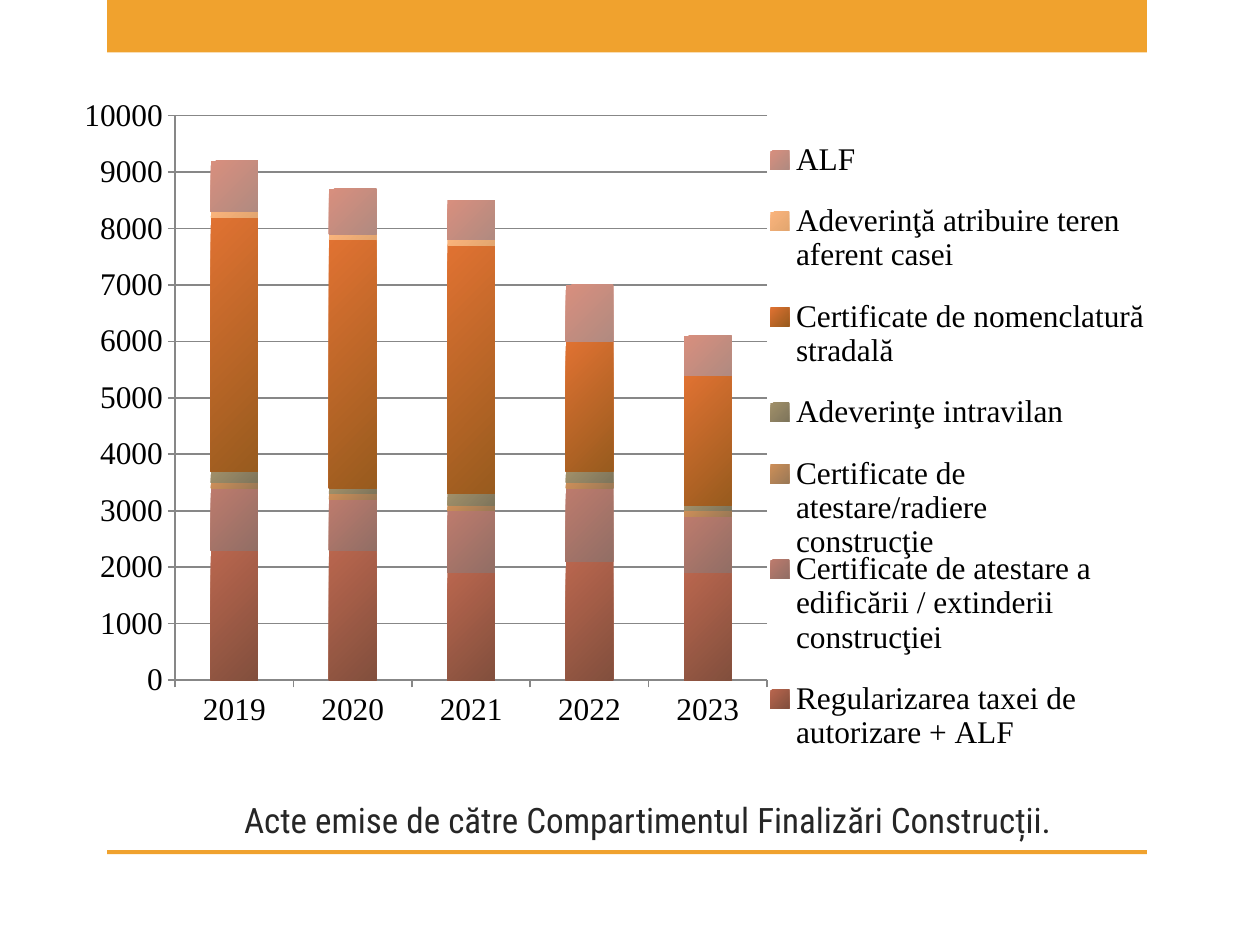
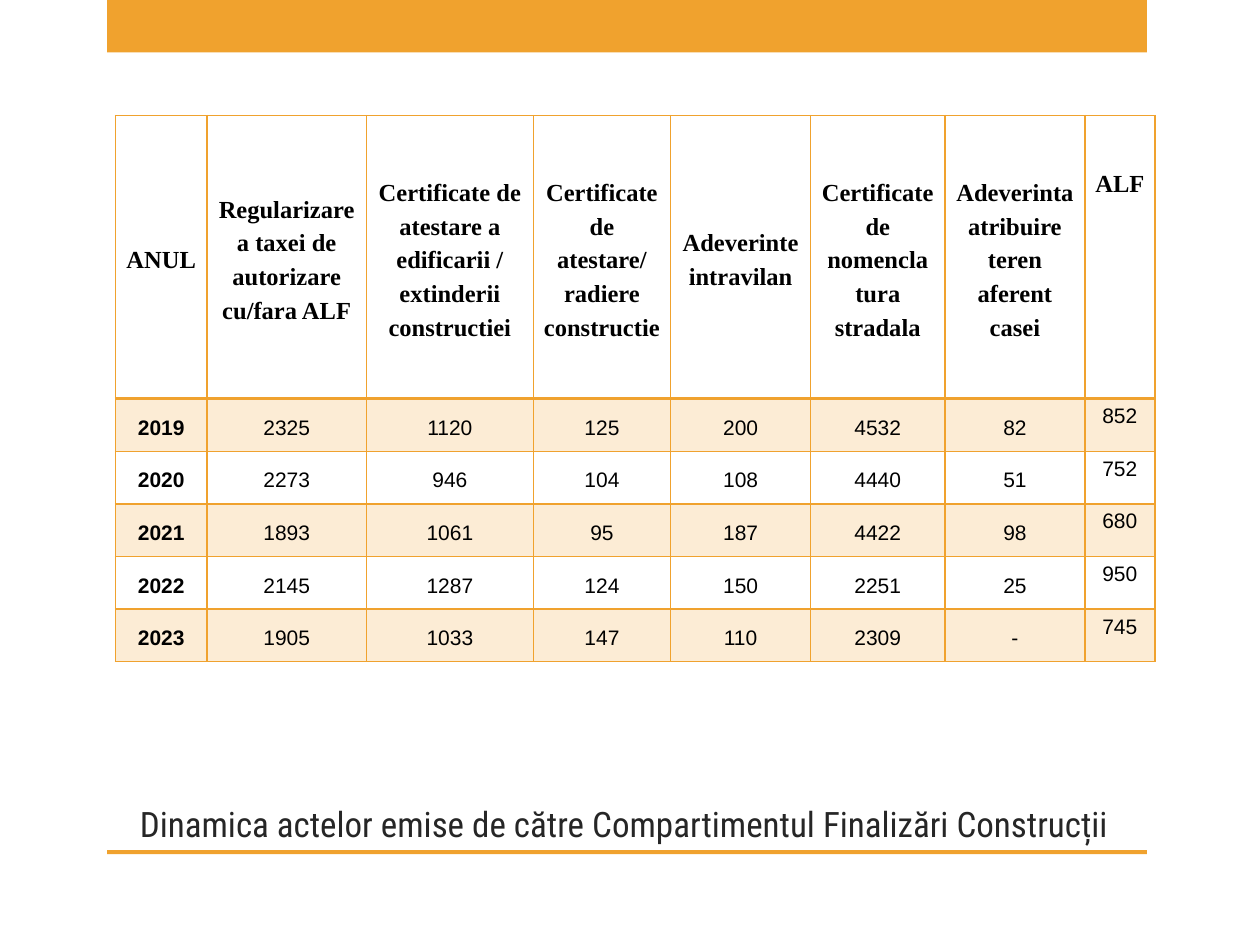
"""Build two slides on the documents issued by the construction completion office."""
from pptx import Presentation
from pptx.chart.data import CategoryChartData
from pptx.dml.color import RGBColor
from pptx.enum.chart import XL_CHART_TYPE as CHART, XL_LEGEND_POSITION as LEGEND, XL_TICK_MARK as TICK
from pptx.enum.shapes import MSO_SHAPE as SHAPE
from pptx.enum.text import MSO_ANCHOR as ANCHOR, MSO_AUTO_SIZE as AUTO, PP_ALIGN as ALIGN
from pptx.oxml import parse_xml
from pptx.oxml.ns import nsdecls, qn
from pptx.util import Cm, Pt

ORANGE = RGBColor(0xF0, 0xA2, 0x2E)
BLACK = RGBColor(0, 0, 0)
DARK = RGBColor(0x26, 0x26, 0x26)
GRAY = RGBColor(0x87, 0x87, 0x87)

TITLE_FONT, HEAD_FONT, BODY_FONT = "Roboto Condensed", "Times New Roman", "Arial"

YEARS = ["2019", "2020", "2021", "2022", "2023"]
COUNTS = [
    [2325, 2273, 1893, 2145, 1905],
    [1120, 946, 1061, 1287, 1033],
    [125, 104, 95, 124, 147],
    [200, 108, 187, 150, 110],
    [4532, 4440, 4422, 2251, 2309],
    [82, 51, 98, 25, 0],
    [852, 752, 680, 950, 745],
]
SERIES = [
    ("Regularizarea taxei de autorizare + ALF", RGBColor(0xB9, 0x66, 0x4E), RGBColor(0x82, 0x4F, 0x3D)),
    ("Certificate de atestare a edificării / extinderii construcţiei",
     RGBColor(0xBD, 0x7B, 0x6D), RGBColor(0x92, 0x6E, 0x65)),
    ("Certificate de atestare/radiere construcţie", RGBColor(0xCD, 0x8F, 0x58), RGBColor(0x9B, 0x79, 0x56)),
    ("Adeverinţe intravilan", RGBColor(0xA1, 0x90, 0x6A), RGBColor(0x7E, 0x75, 0x5B)),
    ("Certificate de nomenclatură stradală", RGBColor(0xE0, 0x72, 0x32), RGBColor(0x98, 0x5B, 0x1E)),
    ("Adeverinţă atribuire teren aferent casei", RGBColor(0xFA, 0xB4, 0x7C), RGBColor(0xE3, 0xA6, 0x70)),
    ("ALF", RGBColor(0xD8, 0x8F, 0x7E), RGBColor(0xB1, 0x8A, 0x80)),
]
HEADINGS = [
    "ANUL",
    "Regularizarea taxei de autorizare cu/fara ALF",
    "Certificate de atestare a edificarii / extinderii constructiei",
    "Certificate de atestare/ radiere constructie",
    "Adeverinte intravilan",
    "Certificate de nomencla tura stradala",
    "Adeverinta atribuire teren aferent casei",
    "ALF",
]
COL_WIDTHS = [1.84, 3.22, 3.36, 2.77, 2.82, 2.71, 2.82, 1.41]
HEAD_HEIGHT, ROW_HEIGHT = 5.71, 1.06


def write(tf, text, font=BODY_FONT, size=12, color=BLACK, bold=False,
          align=ALIGN.CENTER, spacing=None, after=None):
    p = tf.paragraphs[0]
    p.alignment, p.line_spacing = align, spacing
    if after is not None:
        p.space_after = Pt(after)
    r = p.add_run()
    r.text = text
    f = r.font
    f.name, f.size, f.bold = font, Pt(size), bold
    f.color.rgb = color


def place(parent, index, x, y, w, h, inner=False):
    old = parent.find(qn("c:layout"))
    if old is not None:
        parent.remove(old)
    target = '<c:layoutTarget val="inner"/>' if inner else ""
    modes = "".join(f'<c:{axis}Mode val="edge"/>' for axis in "xy")
    sizes = "".join(f'<c:{k} val="{v}"/>' for k, v in zip("xywh", (x, y, w, h)))
    parent.insert(index, parse_xml(
        f'<c:layout {nsdecls("c")}><c:manualLayout>{target}{modes}{sizes}'
        '</c:manualLayout></c:layout>'))


def set_borders(cell, bottom):
    tc_pr = cell._tc.get_or_add_tcPr()
    for i, side in enumerate("LRTB"):
        width = Pt(bottom if side == "B" else 1)
        tc_pr.insert(i, parse_xml(
            f'<a:ln{side} {nsdecls("a")} w="{width}"><a:solidFill>'
            f'<a:srgbClr val="{ORANGE}"/></a:solidFill></a:ln{side}>'))


class Deck:
    def __init__(self):
        self.prs = Presentation()
        self.prs.slide_width, self.prs.slide_height = Cm(25.4), Cm(19.05)
        self.s = None

    def new_slide(self):
        self.s = self.prs.slides.add_slide(self.prs.slide_layouts[5])
        self.band(0, 1.06)
        self.band(17.14, 0.08)

    def band(self, top, height):
        sp = self.s.shapes.add_shape(SHAPE.RECTANGLE, Cm(2.16), Cm(top), Cm(20.96), Cm(height))
        sp.shadow.inherit = False
        sp.fill.solid()
        sp.fill.fore_color.rgb = ORANGE
        sp.line.fill.background()

    def title(self, text, top, height, align, indent=0.25, bottom=0.13):
        sp = self.s.shapes.title
        sp.left, sp.top, sp.width, sp.height = Cm(2.11), Cm(top), Cm(20.96), Cm(height)
        tf = sp.text_frame
        tf.word_wrap, tf.auto_size = True, AUTO.NONE
        tf.vertical_anchor = ANCHOR.BOTTOM
        tf.margin_left, tf.margin_bottom = Cm(indent), Cm(bottom)
        write(tf, text, TITLE_FONT, 20, DARK, align=align)

    def stacked_chart(self):
        data = CategoryChartData()
        data.categories = YEARS
        for (name, _, _), counts in zip(SERIES, COUNTS):
            data.add_series(name, [round(n, -2) for n in counts])
        chart = self.s.shapes.add_chart(
            CHART.COLUMN_STACKED, Cm(1.7), Cm(1.91), Cm(21.79), Cm(14.05), data).chart
        chart.has_title = False
        chart.font.name, chart.font.size = HEAD_FONT, Pt(18)
        chart.font.color.rgb = BLACK

        plot = chart.plots[0]
        plot.gap_width, plot.overlap, plot.vary_by_categories = 150, 100, False
        for series, (_, light, dark) in zip(plot.series, SERIES):
            fill = series.format.fill
            fill.gradient()
            fill.gradient_angle = 315
            for stop, color in zip(fill.gradient_stops, (light, dark)):
                stop.color.rgb = color

        values = chart.value_axis
        values.minimum_scale, values.maximum_scale, values.major_unit = 0, 10000, 1000
        values.has_major_gridlines = True
        for axis in (values, chart.category_axis):
            axis.major_tick_mark = TICK.OUTSIDE
        for part in (values, chart.category_axis, values.major_gridlines):
            part.format.line.color.rgb = GRAY
            part.format.line.width = Pt(1)

        chart.has_legend = True
        chart.legend.position = LEGEND.RIGHT
        chart.legend.include_in_layout = False
        place(chart.element.xpath(".//c:plotArea")[0], 0, 0.08, 0.03, 0.55, 0.81, inner=True)
        place(chart.element.xpath(".//c:legend")[0], 1, 0.65, 0.03, 0.35, 0.95)

    def cell(self, cell, text, head, striped, bold, last):
        cell.margin_left = cell.margin_right = Cm(0.19)
        cell.margin_top = Cm(0.98 if head and last else 0)
        cell.margin_bottom = 0
        cell.vertical_anchor = ANCHOR.TOP if last else ANCHOR.MIDDLE
        if striped:
            cell.fill.solid()
            cell.fill.fore_color.rgb = ORANGE
            color = cell._tc.tcPr.find(".//" + qn("a:srgbClr"))
            color.append(parse_xml(f'<a:alpha {nsdecls("a")} val="20000"/>'))
        else:
            cell.fill.background()
        set_borders(cell, 2 if head else 1)
        write(cell.text_frame, text, HEAD_FONT if head else BODY_FONT, 14 if head else 12,
              bold=bold, spacing=1.25, after=9)

    def counts_table(self):
        rows = [HEADINGS] + [
            [year] + [str(n or "-") for n in counts] for year, *counts in zip(YEARS, *COUNTS)]
        height = HEAD_HEIGHT + ROW_HEIGHT * len(YEARS)
        table = self.s.shapes.add_table(
            len(rows), len(HEADINGS), Cm(2.33), Cm(2.33), Cm(sum(COL_WIDTHS)), Cm(height)).table
        table.first_row = table.horz_banding = False
        for column, width in zip(table.columns, COL_WIDTHS):
            column.width = Cm(width)
        for i, texts in enumerate(rows):
            table.rows[i].height = Cm(ROW_HEIGHT if i else HEAD_HEIGHT)
            for j, text in enumerate(texts):
                self.cell(table.cell(i, j), text, head=i == 0, striped=i % 2 == 1,
                          bold=i == 0 or j == 0, last=j == len(texts) - 1)


def main():
    deck = Deck()
    deck.new_slide()
    deck.title("Acte emise de către Compartimentul Finalizări Construcții.",
               14.17, 2.97, ALIGN.JUSTIFY, indent=2.81, bottom=0.19)
    deck.stacked_chart()

    deck.new_slide()
    deck.title("Dinamica actelor emise de către Compartimentul Finalizări Construcții",
               15.88, 1.27, ALIGN.CENTER)
    deck.counts_table()
    deck.prs.save("out.pptx")


if __name__ == "__main__":
    main()
